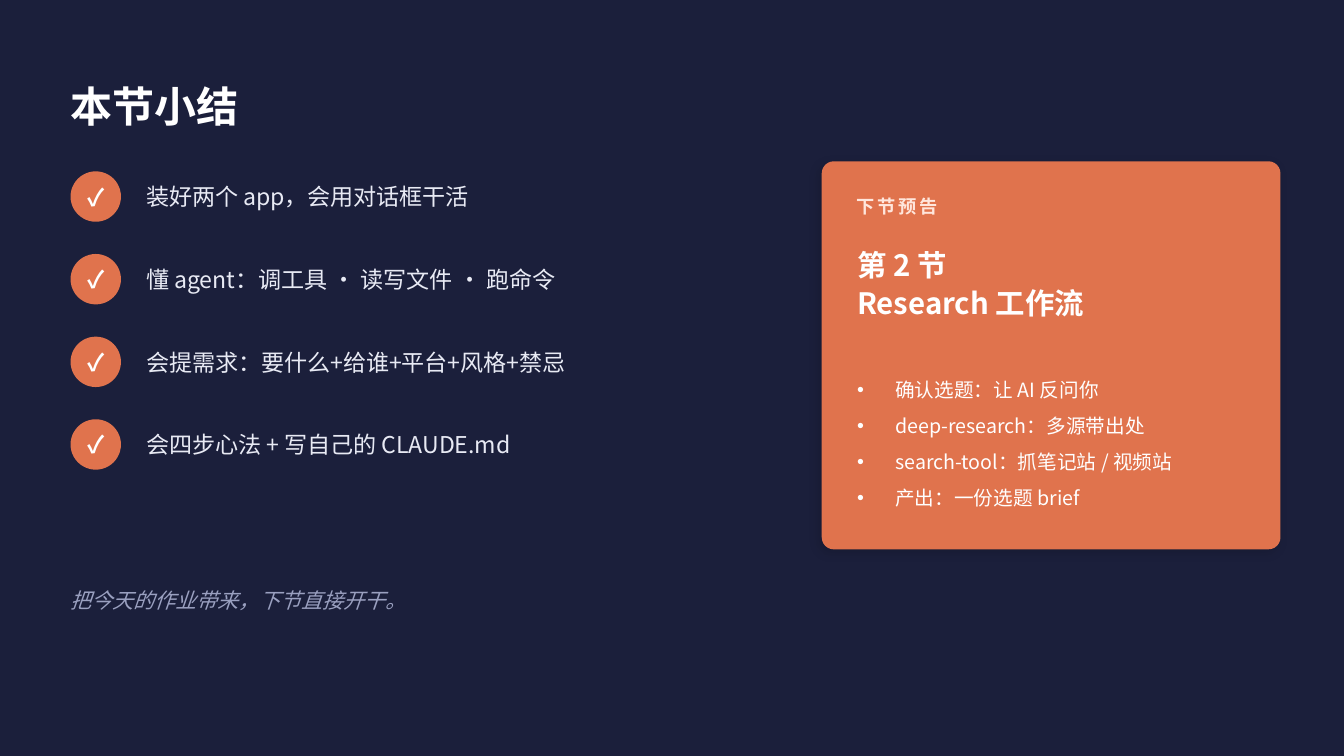
from dataclasses import dataclass

from lxml import etree
from pptx import Presentation
from pptx.dml.color import RGBColor
from pptx.enum.shapes import MSO_SHAPE
from pptx.enum.text import MSO_ANCHOR, MSO_AUTO_SIZE, PP_ALIGN
from pptx.oxml.ns import qn
from pptx.util import Inches, Pt

OVAL = MSO_SHAPE.OVAL
ROUND = MSO_SHAPE.ROUNDED_RECTANGLE
MIDDLE = MSO_ANCHOR.MIDDLE
FIXED = MSO_AUTO_SIZE.NONE
LEFT, CENTER = PP_ALIGN.LEFT, PP_ALIGN.CENTER

FONT = "Noto Sans CJK SC"
COLORS = {
    "navy": "1B1F3B",
    "orange": "E0734D",
    "white": "FFFFFF",
    "pale": "E8EAF4",
    "peach": "FFE6DC",
    "muted": "9AA0C0",
    "black": "000000",
}


@dataclass
class Box:
    left: float
    top: float
    width: float
    height: float

    def lengths(self):
        return [Inches(n) for n in (self.left, self.top, self.width, self.height)]


@dataclass
class Label:
    box: Box
    lines: list[str]
    style: dict


POINTS = [
    "装好两个 app，会用对话框干活",
    "懂 agent：调工具 · 读写文件 · 跑命令",
    "会提需求：要什么+给谁+平台+风格+禁忌",
    "会四步心法 + 写自己的 CLAUDE.md",
]
TOPICS = [
    "确认选题：让 AI 反问你",
    "deep-research：多源带出处",
    "search-tool：抓笔记站 / 视频站",
    "产出：一份选题 brief",
]
LABELS = [
    Label(Box(8.5, 1.85, 4, 0.4), ["下节预告"],
          dict(size=13, color="peach", bold=True, track=2)),
    Label(Box(8.5, 2.3, 3.95, 1), ["第 2 节", "Research 工作流"],
          dict(size=21, bold=True, leading=1.08)),
    Label(Box(0.7, 5.7, 7, 0.5), ["把今天的作业带来，下节直接开干。"],
          dict(size=15, color="muted", italic=True)),
]


def paint(fill, color: str) -> None:
    fill.solid()
    fill.fore_color.rgb = RGBColor.from_string(COLORS[color])


def write(shape, lines: list[str], *, size: float, color: str = "white",
          bold: bool = False, italic: bool = False, align=LEFT,
          leading: float = 1, after: float = 0, track: float = 0,
          indent: float = 0) -> None:
    frame = shape.text_frame
    frame.word_wrap = True
    frame.auto_size = FIXED
    frame.vertical_anchor = MIDDLE
    frame.margin_left = frame.margin_right = 0
    frame.margin_top = frame.margin_bottom = 0
    frame.text = "\n".join(lines)
    for para in frame.paragraphs:
        para.alignment = align
        para.line_spacing = leading
        para.space_before = Pt(0)
        para.space_after = Pt(after)
        if indent:
            props = para._p.get_or_add_pPr()
            props.set("marL", str(Inches(indent)))
            props.set("indent", str(-Inches(indent)))
            etree.SubElement(props, qn("a:buChar"), char="•")
        for run in para.runs:
            font = run.font
            font.size, font.bold, font.italic = Pt(size), bold, italic
            font.color.rgb = RGBColor.from_string(COLORS[color])
            font.name = FONT
            props = run._r.get_or_add_rPr()
            etree.SubElement(props, qn("a:ea"), typeface=FONT)
            if track:
                props.set("spc", str(int(track * 100)))


def place(shape, box: Box) -> None:
    shape.left, shape.top, shape.width, shape.height = box.lengths()


def draw(slide, kind, box: Box):
    shape = slide.shapes.add_shape(kind, *box.lengths())
    shape.shadow.inherit = False
    paint(shape.fill, "orange")
    shape.line.fill.background()
    return shape


def label(slide, item: Label) -> None:
    write(slide.shapes.add_textbox(*item.box.lengths()), item.lines, **item.style)


def shade(shape) -> None:
    effects = shape._element.spPr.find(qn("a:effectLst"))
    outer = etree.SubElement(effects, qn("a:outerShdw"), blurRad=str(Pt(7)),
                             dist=str(Pt(3)), dir=str(135 * 60000),
                             algn="bl", rotWithShape="0")
    tint = etree.SubElement(outer, qn("a:srgbClr"), val=COLORS["black"])
    etree.SubElement(tint, qn("a:alpha"), val="12000")


def main() -> None:
    deck = Presentation()
    deck.slide_width, deck.slide_height = Inches(13.33), Inches(7.5)
    slide = deck.slides.add_slide(deck.slide_layouts[1])
    paint(slide.background.fill, "navy")
    title, body = slide.placeholders

    place(title, Box(0.7, 0.7, 11, 0.7))
    write(title, ["本节小结"], size=30, bold=True)

    for row, point in enumerate(POINTS):
        top = 1.7 + 0.82 * row
        badge = draw(slide, OVAL, Box(0.7, top, 0.5, 0.5))
        write(badge, ["✓"], size=17, bold=True, align=CENTER)
        label(slide, Label(Box(1.45, top, 6.7, 0.5), [point],
                           dict(size=16.5, color="pale")))

    card = draw(slide, ROUND, Box(8.15, 1.6, 4.55, 3.85))
    card.adjustments[0] = 0.031
    shade(card)

    for item in LABELS:
        label(slide, item)

    place(body, Box(8.5, 3.5, 3.95, 1.8))
    write(body, TOPICS, size=14, after=9, indent=0.38)
    card.element.getparent().append(body.element)

    deck.save("out.pptx")


if __name__ == "__main__":
    main()
